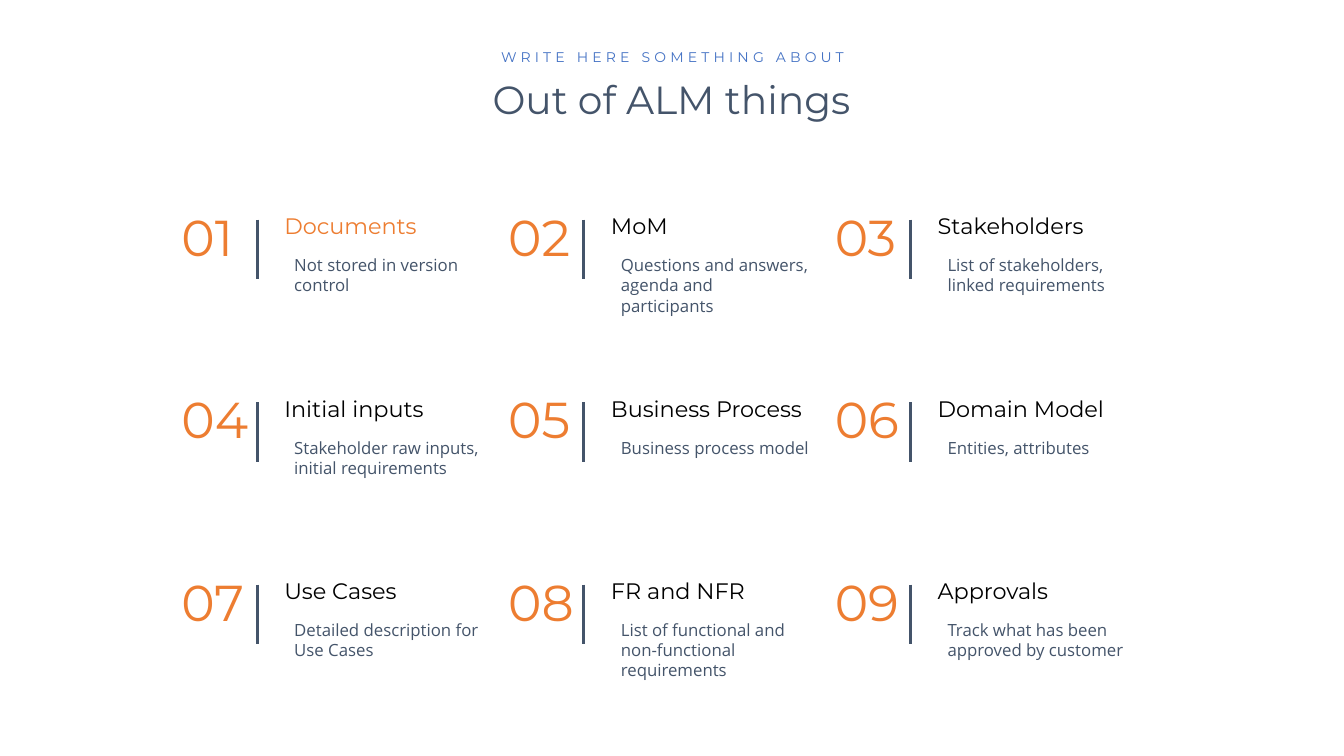
from lxml import etree
from pptx import Presentation
from pptx.dml.color import RGBColor
from pptx.enum import shapes, text
from pptx.oxml.ns import qn
from pptx.util import Inches, Pt

COLORS = {"slate": "44546A", "orange": "ED7D31", "blue": "4472C4", "black": "000000"}
HEADING_FONT, BODY_FONT = "Montserrat", "Open Sans"

TOPICS = [
    ("Documents", "Not stored in version control"),
    ("MoM", "Questions and answers, agenda and participants"),
    ("Stakeholders", "List of stakeholders, linked requirements"),
    ("Initial inputs", "Stakeholder raw inputs, initial requirements"),
    ("Business Process", "Business process model"),
    ("Domain Model", "Entities, attributes"),
    ("Use Cases", "Detailed description for Use Cases"),
    ("FR and NFR", "List of functional and non-functional requirements"),
    ("Approvals", "Track what has been approved by customer"),
]
COLUMNS = 3
GRID_LEFT, GRID_TOP = 1.8, 2.16
COLUMN_STEP, ROW_STEP = 3.24, 1.81

presentation = Presentation()
presentation.slide_width = Inches(13.33)
presentation.slide_height = Inches(7.5)
slide = presentation.slides.add_slide(presentation.slide_layouts[5])


def write(shape, words, size, color, font=HEADING_FONT):
    frame = shape.text_frame
    frame.word_wrap = True
    frame.vertical_anchor = text.MSO_ANCHOR.TOP
    frame.text = words
    paragraph = frame.paragraphs[0]
    paragraph.font.size = Pt(size)
    paragraph.font.name = font
    paragraph.font.color.rgb = RGBColor.from_string(COLORS[color])
    return paragraph


def add_text(left, top, width, height, words, size, color, font=HEADING_FONT, tight=False):
    box = slide.shapes.add_textbox(Inches(left), Inches(top), Inches(width), Inches(height))
    paragraph = write(box, words, size, color, font)
    if tight:
        frame = box.text_frame
        frame.margin_left = frame.margin_top = frame.margin_right = frame.margin_bottom = 0
        paragraph.line_spacing = 0.8
    return paragraph


# Title and the spaced line above it
title = slide.shapes.title
title.left, title.top = Inches(3.33), Inches(0.7)
title.width, title.height = Inches(6.66), Inches(0.57)
heading = write(title, "Out of ALM things", 28, "slate")
heading.alignment = text.PP_ALIGN.CENTER
title.text_frame.auto_size = text.MSO_AUTO_SIZE.NONE

kicker = add_text(3.6, 0.43, 6.14, 0.27, "WRITE HERE SOMETHING ABOUT", 10, "blue")
kicker.alignment = text.PP_ALIGN.CENTER
kicker.runs[0]._r.get_or_add_rPr().set("spc", "300")

# Grid of numbered topics
for index, (name, description) in enumerate(TOPICS):
    row, column = divmod(index, COLUMNS)
    left = GRID_LEFT + column * COLUMN_STEP
    top = GRID_TOP + row * ROW_STEP
    name_color = "orange" if index == 0 else "black"

    add_text(left + 1.02, top, 1.92, 0.22, name, 16, name_color, tight=True)
    add_text(left, top, 0.85, 0.5, f"{index + 1:02d}", 36, "orange", tight=True)

    divider = slide.shapes.add_connector(
        shapes.MSO_CONNECTOR.STRAIGHT,
        Inches(left + 0.75), Inches(top + 0.02), Inches(left + 0.75), Inches(top + 0.61))
    divider.line.color.rgb = RGBColor.from_string(COLORS["slate"])
    divider.line.width = Pt(2)
    etree.SubElement(divider._element.spPr, qn("a:effectLst"))

    detail = add_text(left + 1.02, top + 0.32, 2.07, 0.48, description, 12, "slate", BODY_FONT)
    detail.space_before = Pt(10)

presentation.save("out.pptx")
